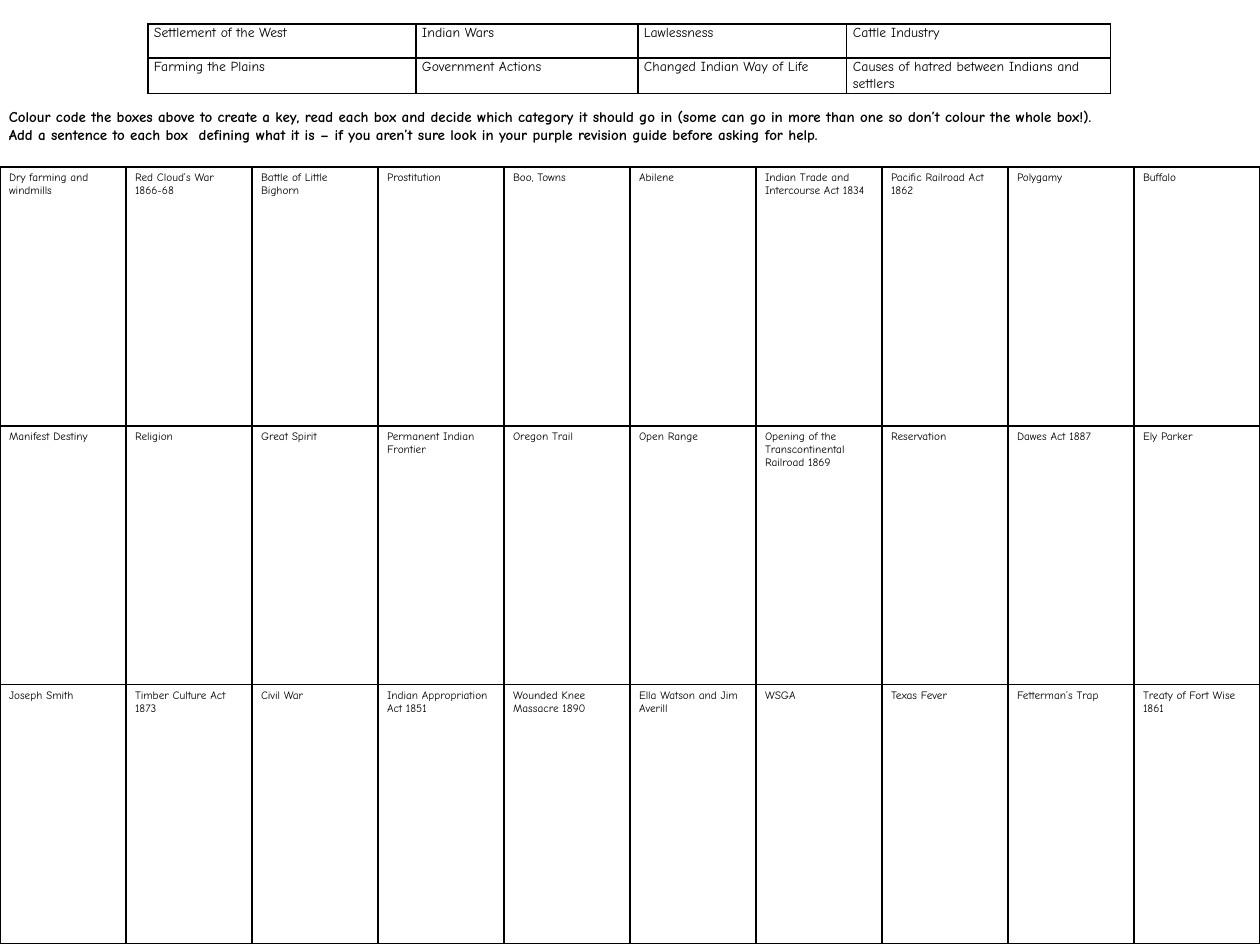
"""Builds a revision sheet on the American West with a category key and a topic grid."""
from lxml import etree
from pptx import Presentation
from pptx import util as u
from pptx.dml.color import RGBColor
from pptx.oxml import ns

PX = u.Inches(1) // 90
SLIDE_W, SLIDE_H = 1260, 945
FONT = "Comic Neue"
COLOURS = {"ink": "000000", "paper": "FFFFFF"}

CATEGORIES = [
    ["Settlement of the West", "Indian Wars", "Lawlessness", "Cattle Industry"],
    ["Farming the Plains", "Government Actions", "Changed Indian Way of Life",
     "Causes of hatred between Indians and settlers"],
]
INSTRUCTIONS = [
    "Colour code the boxes above to create a key, read each box and decide which category "
    "it should go in (some can go in more than one so don’t colour the whole box!).",
    "Add a sentence to each box  defining what it is – if you aren’t sure look in your "
    "purple revision guide before asking for help.",
]
TOPICS = [
    ["Dry farming and windmills", "Red Cloud’s War 1866-68", "Battle of Little Bighorn",
     "Prostitution", "Boo, Towns", "Abilene", "Indian Trade and Intercourse Act 1834",
     "Pacific Railroad Act 1862", "Polygamy", "Buffalo"],
    ["Manifest Destiny", "Religion", "Great Spirit", "Permanent Indian Frontier",
     "Oregon Trail", "Open Range", "Opening of the Transcontinental Railroad 1869",
     "Reservation", "Dawes Act 1887", "Ely Parker"],
    ["Joseph Smith", "Timber Culture Act 1873", "Civil War", "Indian Appropriation Act 1851",
     "Wounded Knee Massacre 1890", "Ella Watson and Jim Averill", "WSGA", "Texas Fever",
     "Fetterman’s Trap", "Treaty of Fort Wise 1861"],
]


def style_text(frame, size, bold=False, spacing=None):
    for paragraph in frame.paragraphs:
        if spacing:
            paragraph.line_spacing = spacing
        for run in paragraph.runs:
            run.font.name = FONT
            run.font.size = u.Pt(size)
            run.font.bold = bold
            run.font.color.rgb = RGBColor.from_string(COLOURS["ink"])


def add_borders(cell):
    properties = cell._tc.get_or_add_tcPr()
    for index, side in enumerate(("lnL", "lnR", "lnT", "lnB")):
        border = etree.Element(ns.qn(f"a:{side}"), w=str(u.Pt(1)))
        fill = etree.SubElement(border, ns.qn("a:solidFill"))
        etree.SubElement(fill, ns.qn("a:srgbClr"), val=COLOURS["ink"])
        properties.insert(index, border)


def add_grid(slide, rows, left, top, widths, heights, size, spacing=None, inset=None):
    frame = slide.shapes.add_table(len(rows), len(widths), left * PX, top * PX,
                                   sum(widths) * PX, sum(heights) * PX)
    table = frame.table
    table.first_row = table.horz_banding = False
    for column, width in zip(table.columns, widths):
        column.width = width * PX
    for row, height, labels in zip(table.rows, heights, rows):
        row.height = height * PX
        for cell, label in zip(row.cells, labels):
            cell.text_frame.text = label
            style_text(cell.text_frame, size, spacing=spacing)
            if inset is not None:
                cell.margin_left = cell.margin_right = inset * PX
                cell.margin_top = cell.margin_bottom = 0
            cell.fill.solid()
            cell.fill.fore_color.rgb = RGBColor.from_string(COLOURS["paper"])
            add_borders(cell)


def main():
    deck = Presentation()
    deck.slide_width, deck.slide_height = SLIDE_W * PX, SLIDE_H * PX
    slide = deck.slides.add_slide(deck.slide_layouts[6])

    columns = len(TOPICS[0])
    add_grid(slide, TOPICS, 0, 167, [SLIDE_W // columns] * columns, [259] * len(TOPICS), 9)

    instructions = slide.shapes.add_textbox(0, 103 * PX, SLIDE_W * PX, 45 * PX).text_frame
    instructions.word_wrap = True
    instructions.text = "\n".join(INSTRUCTIONS)
    style_text(instructions, 12, bold=True)

    add_grid(slide, CATEGORIES, 148, 24, [268, 222, 209, 264], [34, 34], 11,
             spacing=1.07, inset=6)
    deck.save("out.pptx")


if __name__ == "__main__":
    main()
